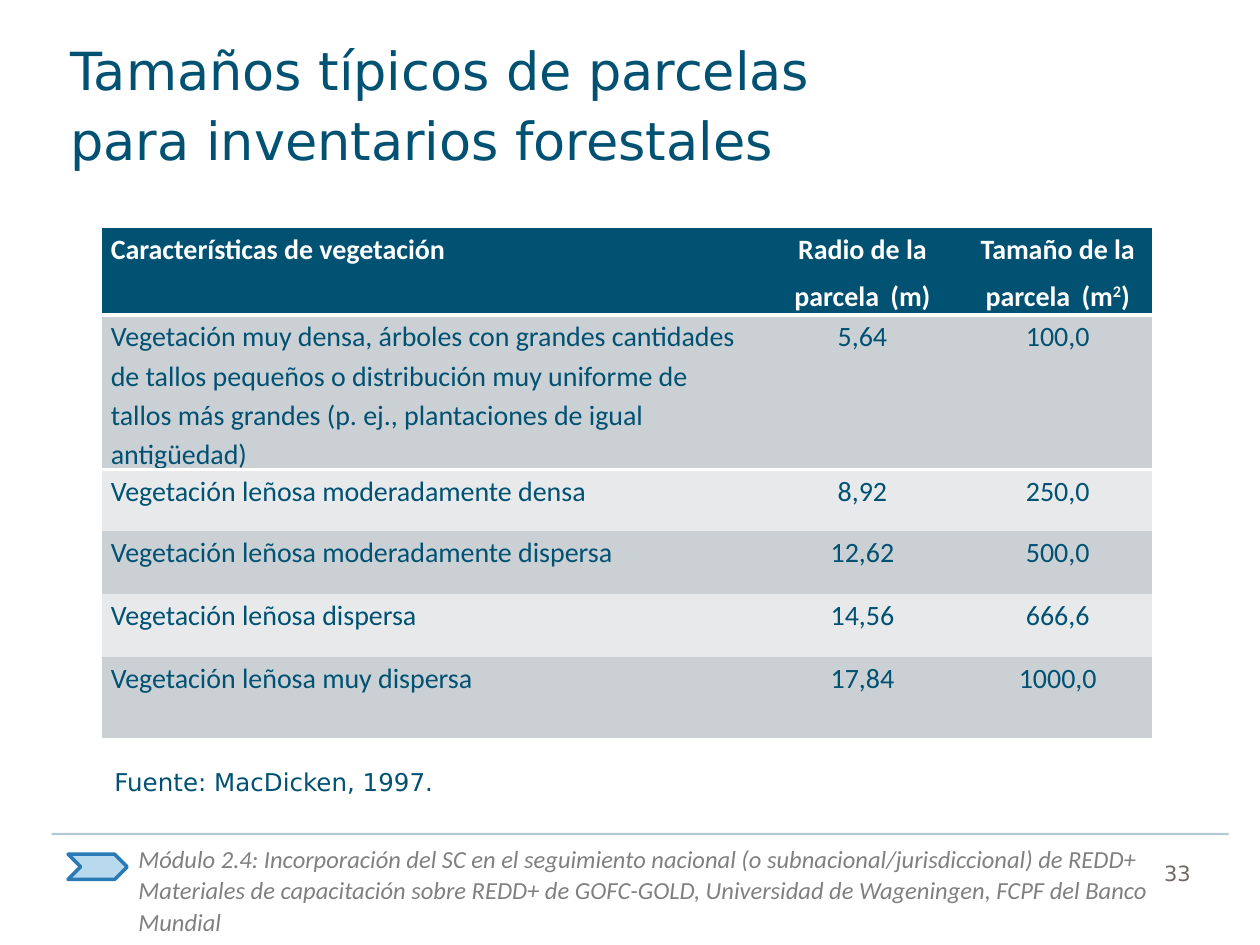
"""Build the slide on typical plot sizes for forest inventories."""
from lxml import etree
from pptx import Presentation
from pptx.dml.color import RGBColor
from pptx.enum.shapes import MSO_CONNECTOR, MSO_SHAPE
from pptx.enum.text import MSO_AUTO_SIZE, PP_ALIGN
from pptx.oxml import parse_xml
from pptx.oxml.ns import nsdecls, qn
from pptx.util import Inches, Pt

TEAL = RGBColor(0x00, 0x51, 0x72)
WHITE = RGBColor(0xFF, 0xFF, 0xFF)
DARK_BAND = RGBColor(0xCB, 0xD0, 0xD5)
LIGHT_BAND = RGBColor(0xE7, 0xE9, 0xEB)
GRAY = RGBColor(0x80, 0x80, 0x80)
BROWN_GRAY = RGBColor(0x70, 0x67, 0x62)
SKY = RGBColor(0xB9, 0xD9, 0xEF)
BLUE = RGBColor(0x29, 0x7A, 0xB5)
SANS = "DejaVu Sans"
BODY = "Calibri"
PLAIN_TABLE = "{2D5ABB26-0587-4C30-8999-92F81FD0307C}"


def style(font, name, size, color, bold=False, italic=False):
    font.name, font.size, font.bold, font.italic = name, Pt(size), bold, italic
    font.color.rgb = color


def add_text(place, text, name, size, color, spacing=18, italic=False, wrap=True):
    box = slide.shapes.add_textbox(*(Inches(v) for v in place))
    frame = box.text_frame
    frame.text = text
    frame.word_wrap = wrap
    frame.auto_size = MSO_AUTO_SIZE.SHAPE_TO_FIT_TEXT
    for paragraph in frame.paragraphs:
        paragraph.line_spacing = Pt(spacing)
        for run in paragraph.runs:
            style(run.font, name, size, color, italic=italic)
    return frame


prs = Presentation()
prs.slide_width, prs.slide_height = Inches(10), Inches(7.5)
slide = prs.slides.add_slide(prs.slide_layouts[6])

add_text(
    (1, 6.63, 8.33, 0.86),
    "Módulo 2.4: Incorporación del SC en el seguimiento nacional (o subnacional/jurisdiccional) de REDD+\n"
    "Materiales de capacitación sobre REDD+ de GOFC-GOLD, Universidad de Wageningen, FCPF del Banco Mundial",
    BODY, 14, GRAY, italic=True)

chevron = slide.shapes.add_shape(
    MSO_SHAPE.CHEVRON, Inches(0.54), Inches(6.78), Inches(0.47), Inches(0.2))
chevron.shadow.inherit = False
chevron.fill.solid()
chevron.fill.fore_color.rgb = SKY
chevron.line.color.rgb = BLUE
chevron.line.width = Pt(2)

add_text((9.14, 6.73, 0.61, 0.33), "33", SANS, 12, BROWN_GRAY)

footer_rule = slide.shapes.add_connector(
    MSO_CONNECTOR.STRAIGHT, Inches(0.41), Inches(6.62), Inches(9.75), Inches(6.62))
footer_rule.line.color.rgb = TEAL
footer_rule.line.width = Pt(1.25)
rule_properties = footer_rule._element.spPr
rule_color = next(rule_properties.iter(qn("a:srgbClr")))
etree.SubElement(rule_color, qn("a:alpha")).set("val", "30000")
etree.SubElement(rule_properties, qn("a:effectLst"))

plots = [
    ("Características de vegetación",
     ("Radio de la parcela", " ", "(m)"),
     ("Tamaño de la parcela", " ", "(m", "2", ")")),
    ("Vegetación muy densa, árboles con grandes cantidades de tallos pequeños o distribución "
     "muy uniforme de tallos más grandes (p. ej., plantaciones de igual antigüedad)",
     "5,64", "100,0"),
    ("Vegetación leñosa moderadamente densa", "8,92", "250,0"),
    ("Vegetación leñosa moderadamente dispersa", "12,62", "500,0"),
    ("Vegetación leñosa dispersa", "14,56", "666,6"),
    ("Vegetación leñosa muy dispersa", "17,84", "1000,0"),
]
table = slide.shapes.add_table(
    len(plots), 3, Inches(0.81), Inches(1.81), Inches(8.33), Inches(4.05)).table
table.horz_banding = False
next(table._tbl.iter(qn("a:tableStyleId"))).text = PLAIN_TABLE
for column, width in zip(table.columns, (5.23, 1.61, 1.49)):
    column.width = Inches(width)
for row, height in zip(table.rows, (0.47, 1.05, 0.49, 0.5, 0.5, 0.64)):
    row.height = Inches(height)

for r, plot in enumerate(plots):
    header = r == 0
    for c, content in enumerate(plot):
        cell = table.cell(r, c)
        cell.margin_left = cell.margin_right = Inches(0.07)
        cell.margin_top = cell.margin_bottom = 0
        cell.fill.solid()
        cell.fill.fore_color.rgb = TEAL if header else DARK_BAND if r % 2 else LIGHT_BAND
        if r < 2:
            edge = "lnB" if header else "lnT"
            cell._tc.get_or_add_tcPr().insert(0, parse_xml(
                f'<a:{edge} {nsdecls("a")} w="25400"><a:solidFill>'
                f'<a:srgbClr val="{WHITE}"/></a:solidFill></a:{edge}>'))
        paragraph = cell.text_frame.paragraphs[0]
        paragraph.line_spacing = 1.15
        paragraph.alignment = PP_ALIGN.CENTER if c else PP_ALIGN.LEFT
        for piece in (content,) if isinstance(content, str) else content:
            run = paragraph.add_run()
            run.text = piece
            if piece == " ":
                style(run.font, SANS, 20, TEAL)
            else:
                style(run.font, BODY, 16, WHITE if header else TEAL, bold=header)
            if piece == "2":
                run.font._element.set("baseline", "30000")

title = add_text(
    (0.54, 0.25, 9.23, 1.27),
    "Tamaños típicos de parcelas\vpara inventarios forestales", SANS, 30, TEAL, spacing=40)
title.margin_left, title.margin_top = Inches(0.02), 0
title.margin_right, title.margin_bottom = Inches(0.1), Inches(0.35)

add_text((0.81, 6.02, 2.79, 0.35), "Fuente: MacDicken, 1997.", SANS, 14, TEAL, wrap=False)

prs.save("out.pptx")
